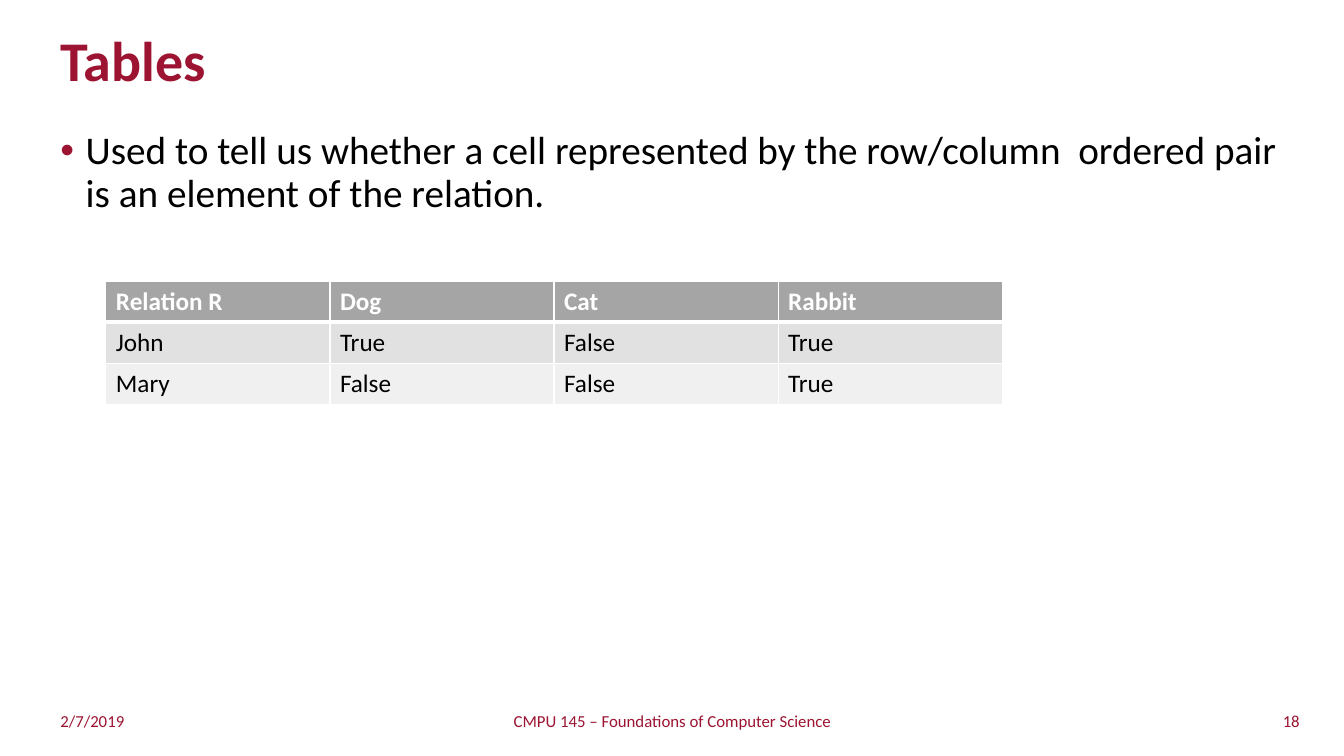
"""Build a slide that shows a relation as a table."""
from dataclasses import dataclass

from lxml.etree import SubElement
from pptx import Presentation
from pptx.dml.color import RGBColor as Rgb
from pptx.enum.text import MSO_ANCHOR as Anchor, MSO_AUTO_SIZE as AutoSize, PP_ALIGN as Align
from pptx.oxml.ns import qn
from pptx.util import Inches, Pt

TITLE = "Tables"
BULLET = ("Used to tell us whether a cell represented by the row/column  ordered pair "
          "is an element of the relation.")
RELATION = [
    ["Relation R", "Dog", "Cat", "Rabbit"],
    ["John", "True", "False", "True"],
    ["Mary", "False", "False", "True"],
]
FOOTERS = [
    ("2/7/2019", 0.5, 3.76, Align.LEFT),
    ("CMPU 145 – Foundations of Computer Science", 4.42, 4.5, Align.CENTER),
    ("18", 9.23, 3.76, Align.RIGHT),
]


@dataclass(frozen=True)
class Theme:
    font: str = "Calibri"
    accent: str = "9C1431"
    text: str = "000000"
    light: str = "FFFFFF"
    row_fills: tuple = ("A5A5A5", "E1E1E1", "F0F0F0")
    title_size: int = 40
    body_size: int = 28
    table_size: int = 18
    footer_size: int = 12
    border: int = 1
    header_border: int = 3


THEME = Theme()


def place(shape, left, top, width, height):
    shape.left, shape.top = Inches(left), Inches(top)
    shape.width, shape.height = Inches(width), Inches(height)


def style(paragraph, size, color, bold=False, align=Align.LEFT):
    paragraph.alignment = align
    font = paragraph.font
    font.name, font.size, font.bold = THEME.font, Pt(size), bold
    font.color.rgb = Rgb.from_string(color)


def add_bullet(paragraph, color, indent):
    properties = paragraph._p.get_or_add_pPr()
    properties.set("marL", str(Inches(indent)))
    properties.set("indent", str(-Inches(indent)))
    bullet_color = SubElement(properties, qn("a:buClr"))
    SubElement(bullet_color, qn("a:srgbClr"), val=color)
    SubElement(properties, qn("a:buFont"), typeface="Arial")
    SubElement(properties, qn("a:buChar"), char="•")


def add_border(cell, side, width):
    line = SubElement(cell._tc.get_or_add_tcPr(), qn(f"a:ln{side}"), w=str(Pt(width)))
    fill = SubElement(line, qn("a:solidFill"))
    SubElement(fill, qn("a:srgbClr"), val=THEME.light)


def add_heading(slide):
    title = slide.shapes.title
    place(title, 0.5, 0.25, 11.45, 0.75)
    frame = title.text_frame
    frame.text = TITLE
    frame.vertical_anchor = Anchor.MIDDLE
    frame.auto_size = AutoSize.NONE
    heading = frame.paragraphs[0]
    heading.line_spacing = 0.9
    style(heading, THEME.title_size, THEME.accent, bold=True)


def add_body(slide):
    body = slide.placeholders[1]
    place(body, 0.5, 1.25, 12.33, 5.45)
    frame = body.text_frame
    frame.text = BULLET
    frame.auto_size = AutoSize.NONE
    statement = frame.paragraphs[0]
    statement.line_spacing = 0.9
    statement.space_before = Pt(0)
    add_bullet(statement, THEME.accent, 0.25)
    style(statement, THEME.body_size, THEME.text)


def add_relation(slide):
    table = slide.shapes.add_table(
        len(RELATION), len(RELATION[0]),
        Inches(1.05), Inches(2.79), Inches(8.89), Inches(1.22)).table
    for row, values in enumerate(RELATION):
        is_header = row == 0
        widths = {
            "L": THEME.border,
            "R": THEME.border,
            "T": THEME.header_border if row == 1 else THEME.border,
            "B": THEME.header_border if is_header else THEME.border,
        }
        for column, value in enumerate(values):
            cell = table.cell(row, column)
            cell.text = value
            for side, width in widths.items():
                add_border(cell, side, width)
            cell.fill.solid()
            cell.fill.fore_color.rgb = Rgb.from_string(THEME.row_fills[row])
            style(cell.text_frame.paragraphs[0], THEME.table_size,
                  THEME.light if is_header else THEME.text, bold=is_header)


def add_footers(slide):
    for text, left, width, align in FOOTERS:
        footer = slide.shapes.add_textbox(
            Inches(left), Inches(6.95), Inches(width), Inches(0.4))
        frame = footer.text_frame
        frame.text = text
        frame.word_wrap = True
        frame.vertical_anchor = Anchor.MIDDLE
        style(frame.paragraphs[0], THEME.footer_size, THEME.accent, align=align)


def main():
    deck = Presentation()
    deck.slide_width, deck.slide_height = Inches(13.33), Inches(7.5)
    slide = deck.slides.add_slide(deck.slide_layouts[1])
    add_heading(slide)
    add_body(slide)
    add_footers(slide)
    add_relation(slide)
    deck.save("out.pptx")


if __name__ == "__main__":
    main()
